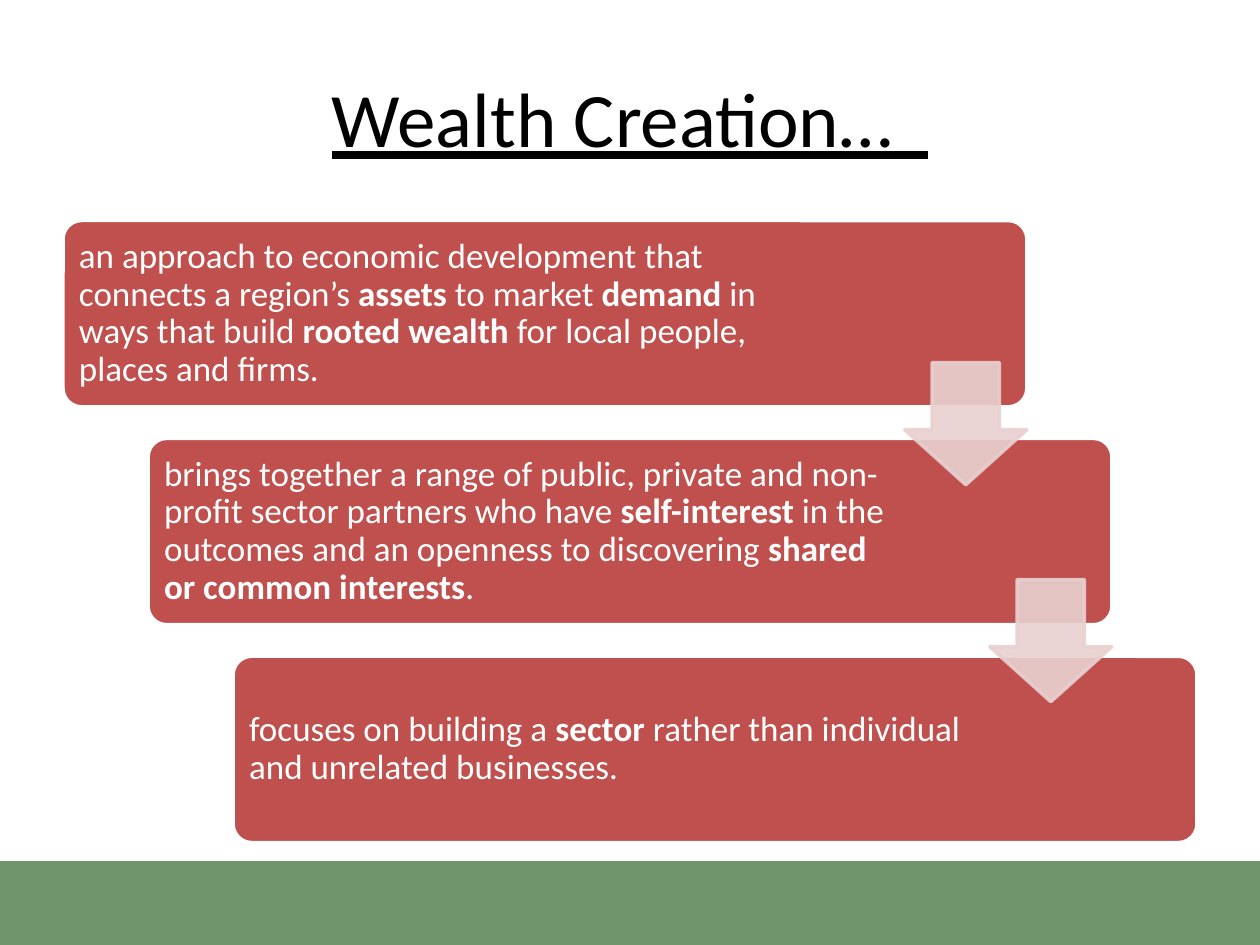
from lxml import etree
from pptx import Presentation
from pptx import util as u
from pptx.dml.color import RGBColor
from pptx.enum import shapes, text
from pptx.oxml.ns import qn

GREEN = RGBColor(0x70, 0x94, 0x6B)
RED = RGBColor(0xC0, 0x50, 0x4D)
PINK = RGBColor(0xE8, 0xD0, 0xD0)
WHITE = RGBColor(0xFF, 0xFF, 0xFF)
BLACK = RGBColor(0x00, 0x00, 0x00)

STEP_X, STEP_Y = 48.6, 124.5
STEP_WIDTH, STEP_HEIGHT = 550.8, 106.5
ARROW_SIZE = 69.8

STEPS = [
    (115, [("an approach to economic development that connects a region’s ", False),
           ("assets", True), (" to market ", False), ("demand", True),
           (" in ways that build ", False), ("rooted wealth ", True),
           ("for local people, places and firms.", False)]),
    (124.5, [("brings together a range of public, private and non-profit sector "
              "partners who have ", False),
             ("self-interest", True),
             (" in the outcomes and an openness to discovering ", False),
             ("shared or common interests", True), (".", False)]),
    (124.5, [("focuses on building a ", False), ("sector", True),
             (" rather than individual and unrelated businesses.", False)]),
]


def write_text(shape, runs, size=20, color=WHITE, underline=False,
               align=text.PP_ALIGN.LEFT, line_spacing=1.0, insets=(7.2, 3.6, 7.2, 3.6)):
    """Fill a shape with one paragraph of (words, bold) runs."""
    frame = shape.text_frame
    frame.word_wrap = True
    frame.vertical_anchor = text.MSO_ANCHOR.MIDDLE
    (frame.margin_left, frame.margin_top,
     frame.margin_right, frame.margin_bottom) = map(u.Pt, insets)
    paragraph = frame.paragraphs[0]
    paragraph.alignment = align
    paragraph.line_spacing = line_spacing
    for words, bold in runs:
        run = paragraph.add_run()
        run.text = words
        run.font.name = "Calibri"
        run.font.size = u.Pt(size)
        run.font.bold = bold
        run.font.underline = underline
        run.font.color.rgb = color


def add_block(slide, kind, box, fill, line=None, adjustments=()):
    """Add a filled preset shape, outlined only if a line colour is given."""
    shape = slide.shapes.add_shape(kind, *map(u.Pt, box))
    shape.shadow.inherit = False
    shape.fill.solid()
    shape.fill.fore_color.rgb = fill
    if line is None:
        shape.line.fill.background()
    else:
        shape.line.color.rgb = line
        shape.line.width = u.Pt(2)
    for index, value in enumerate(adjustments):
        shape.adjustments[index] = value
    return shape


def add_title(slide, words):
    """Add the underlined, centred heading."""
    title = slide.shapes.add_textbox(u.Pt(36), u.Pt(21.6), u.Pt(648), u.Pt(90))
    write_text(title, [(words, False)], size=44, color=BLACK, underline=True,
               align=text.PP_ALIGN.CENTER)


def add_step(slide, index, right_inset, runs):
    """Add one step of the staircase with its text."""
    box = (36 + index * STEP_X, 126 + index * STEP_Y, STEP_WIDTH, STEP_HEIGHT)
    step = add_block(slide, shapes.MSO_SHAPE.ROUNDED_RECTANGLE, box, RED, WHITE, [0.1])
    write_text(step, runs, line_spacing=0.9, insets=(6, 6, right_inset, 6))


def add_arrow(slide, index):
    """Add the translucent arrow from one step to the next."""
    box = (517 + index * STEP_X, 207.2 + index * 124, ARROW_SIZE, ARROW_SIZE)
    arrow = add_block(slide, shapes.MSO_SHAPE.DOWN_ARROW, box, PINK, PINK, [0.55, 0.45])
    for color in arrow.element.spPr.iter(qn("a:srgbClr")):
        etree.SubElement(color, qn("a:alpha"), val="90000")


def main():
    """Build and save the slide."""
    presentation = Presentation()
    presentation.slide_width, presentation.slide_height = u.Pt(720), u.Pt(540)
    slide = presentation.slides.add_slide(presentation.slide_layouts[6])
    add_block(slide, shapes.MSO_SHAPE.RECTANGLE, (0, 492, 720, 48), GREEN)
    add_title(slide, "Wealth Creation…  ")
    for index, (right_inset, runs) in enumerate(STEPS):
        add_step(slide, index, right_inset, runs)
    for index in range(len(STEPS) - 1):
        add_arrow(slide, index)
    presentation.save("out.pptx")


if __name__ == "__main__":
    main()
